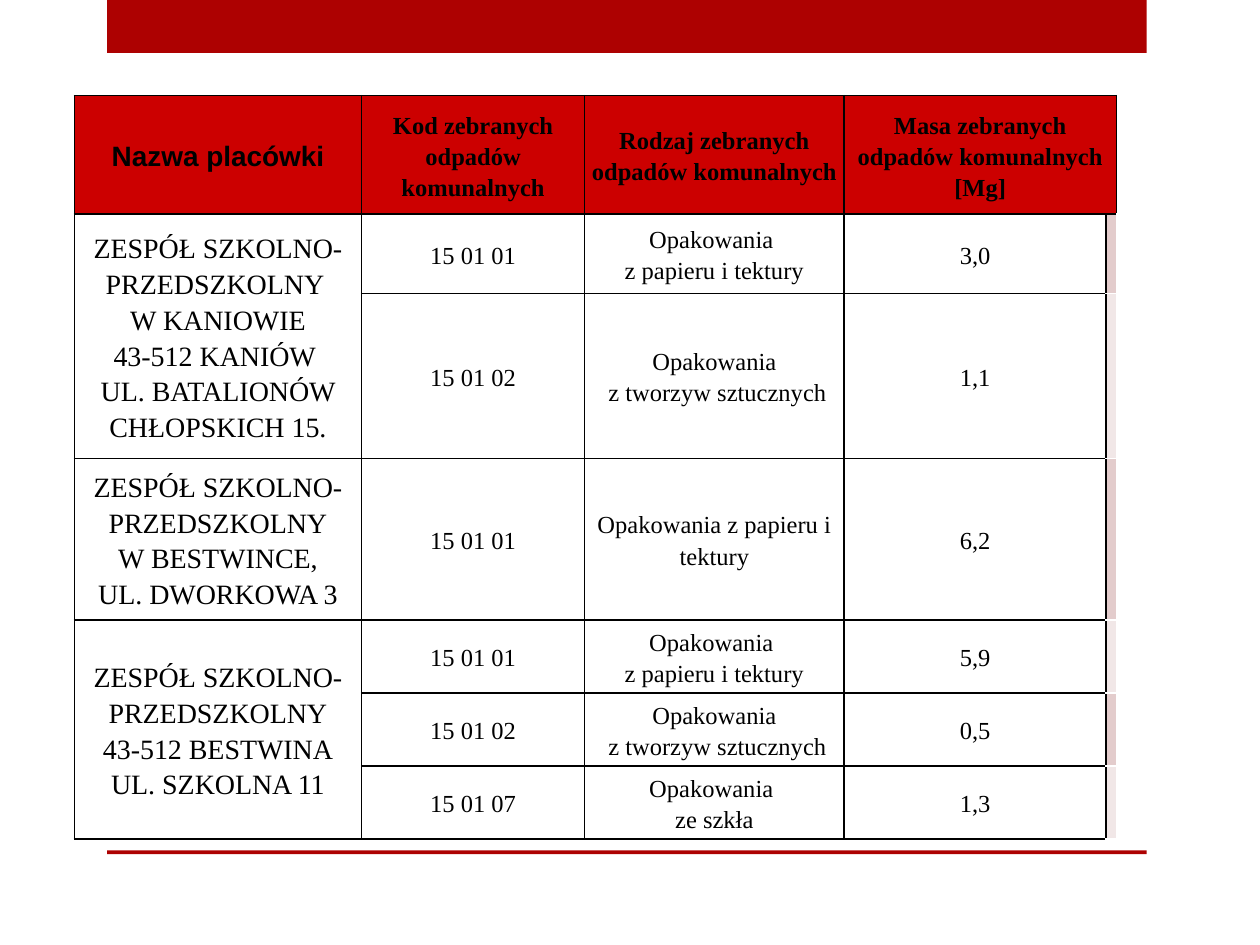
import pptx
import pptx.util
import pptx.dml.color
import pptx.enum.shapes
import pptx.enum.text
import pptx.oxml
import pptx.oxml.ns
from lxml import etree

Inches = pptx.util.Inches
qn = pptx.oxml.ns.qn

# Content: "\n" starts a paragraph, "\v" breaks a line within one
HEADS = [
    "Nazwa placówki",
    "Kod zebranych odpadów komunalnych",
    "Rodzaj zebranych odpadów komunalnych",
    "Masa zebranych odpadów komunalnych\n[Mg]",
]
PAPER = "Opakowania \vz papieru i tektury"
PLASTIC = "Opakowania\n z tworzyw sztucznych"
SCHOOLS = [
    ("ZESPÓŁ SZKOLNO-PRZEDSZKOLNY \vW KANIOWIE\n"
     "43-512 KANIÓW \vUL. BATALIONÓW CHŁOPSKICH 15.",
     [("15 01 01", PAPER, "3,0"),
      ("15 01 02", PLASTIC, "1,1")]),
    ("ZESPÓŁ SZKOLNO-PRZEDSZKOLNY\nW BESTWINCE,\nUL. DWORKOWA 3",
     [("15 01 01", "Opakowania z papieru i tektury", "6,2")]),
    ("ZESPÓŁ SZKOLNO-PRZEDSZKOLNY\n43-512 BESTWINA\nUL. SZKOLNA 11",
     [("15 01 01", PAPER, "5,9"),
      ("15 01 02", PLASTIC, "0,5"),
      ("15 01 07", "Opakowania \vze szkła", "1,3")]),
]

# Layout and colours
BARS = [(0, 0.42), (6.75, 0.03)]
COLS = [2.28, 1.77, 2.06, 2.08, 0.08]
ROWS = [0.94, 0.63, 1.31, 1.28, 0.58, 0.58, 0.58]
LEFT, TOP = 0.59, 0.76
BAR, HEAD = "AD0101", "CC0000"
BANDS = ["E3CCCC", "F1E7E7"]
BLACK, WHITE = "000000", "FFFFFF"
SERIF = "Times New Roman"


def rgb(code):
    return pptx.dml.color.RGBColor.from_string(code)


def paint(item, code):
    item.fill.solid()
    item.fill.fore_color.rgb = rgb(code)


def write(cell, text, size=14, font=SERIF, bold=False, color=BLACK):
    cell.vertical_anchor = pptx.enum.text.MSO_ANCHOR.MIDDLE
    cell.text = text
    for par in cell.text_frame.paragraphs:
        par.alignment = pptx.enum.text.PP_ALIGN.CENTER
        par.line_spacing = 1.15
        for run in par.runs:
            run.font.size = pptx.util.Pt(size)
            run.font.name = font
            run.font.bold = bold
            run.font.color.rgb = rgb(color)
        # Line breaks carry their own text size
        for br in par._p.findall(qn("a:br")):
            etree.SubElement(br, qn("a:rPr"), sz=str(size * 100))


def border(cell, left=BLACK, right=BLACK, top=BLACK, bottom=BLACK):
    props = cell._tc.get_or_add_tcPr()
    sides = zip(("a:lnL", "a:lnR", "a:lnT", "a:lnB"),
                (left, right, top, bottom))
    for spot, (tag, code) in enumerate(sides):
        line = etree.Element(qn(tag), w="12700")
        fill = etree.SubElement(line, qn("a:solidFill"))
        etree.SubElement(fill, qn("a:srgbClr"), val=code)
        props.insert(spot, line)


def main():
    prs = pptx.Presentation()
    prs.slide_width, prs.slide_height = Inches(10), Inches(7.5)
    slide = prs.slides.add_slide(prs.slide_layouts[6])

    # Top and bottom bars
    for top, high in BARS:
        bar = slide.shapes.add_shape(
            pptx.enum.shapes.MSO_SHAPE.RECTANGLE,
            Inches(0.85), Inches(top), Inches(8.25), Inches(high))
        bar.shadow.inherit = False
        paint(bar, BAR)
        bar.line.fill.background()

    # Table grid
    table = slide.shapes.add_table(
        len(ROWS), len(COLS), Inches(LEFT), Inches(TOP),
        Inches(sum(COLS)), Inches(sum(ROWS))).table
    table.first_row = table.horz_banding = False
    for col, wide in zip(table.columns, COLS):
        col.width = Inches(wide)
    for row, high in zip(table.rows, ROWS):
        row.height = Inches(high)

    # Fills and borders; the last column is a narrow banded strip
    last = len(COLS) - 1
    for r in range(len(ROWS)):
        for c in range(len(COLS)):
            cell = table.cell(r, c)
            cell.margin_left = cell.margin_right = Inches(0.05)
            cell.margin_top = cell.margin_bottom = 0
            if r == 0:
                paint(cell, HEAD)
                border(cell)
            elif c == last:
                cell.margin_left = cell.margin_right = 0
                paint(cell, BANDS[(r - 1) % 2])
                border(cell, right=WHITE, bottom=WHITE,
                       top=BLACK if r == 1 else WHITE)
            else:
                cell.fill.background()
                border(cell)

    # Header row
    table.cell(0, last - 1).merge(table.cell(0, last))
    for c, text in enumerate(HEADS):
        look = {"size": 16, "font": "Arial"} if c == 0 else {}
        write(table.cell(0, c), text, bold=True, **look)

    # One block of rows per school
    r = 1
    for name, waste in SCHOOLS:
        if len(waste) > 1:
            table.cell(r, 0).merge(table.cell(r + len(waste) - 1, 0))
        write(table.cell(r, 0), name, size=16)
        for entry in waste:
            for c, text in enumerate(entry, 1):
                write(table.cell(r, c), text)
            r += 1

    prs.save("out.pptx")


if __name__ == "__main__":
    main()
